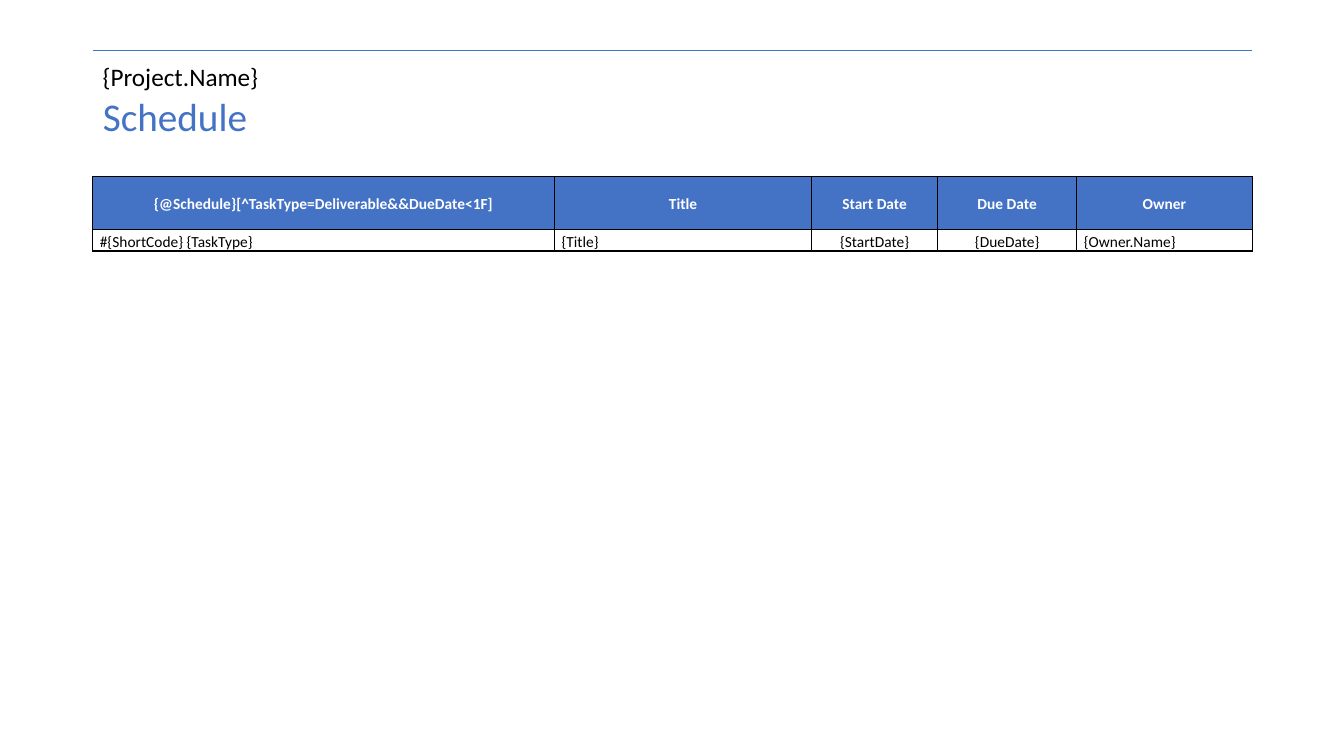
"""Build a project schedule slide with a title and a task table."""
from lxml.etree import SubElement
from pptx import Presentation
from pptx.dml.color import RGBColor
from pptx.enum.shapes import MSO_CONNECTOR as Link
from pptx.enum.text import MSO_ANCHOR as Anchor, MSO_AUTO_SIZE as Fit, PP_ALIGN as Align
from pptx.oxml.ns import qn
from pptx.util import Inches, Pt

BLUE = RGBColor(0x44, 0x72, 0xC4)
BLACK = RGBColor(0, 0, 0)
WHITE = RGBColor(0xFF, 0xFF, 0xFF)
LEFT, WIDTH = 0.92, 11.5
COLS = [4.58, 2.55, 1.25, 1.38, 1.74]
ROWS = [0.53, 0.2]
HEAD = ["{@Schedule}[^TaskType=Deliverable&&DueDate<1F]",
        "Title", "Start Date", "Due Date", "Owner"]
TASK = ["#{ShortCode} {TaskType}", "{Title}", "{StartDate}", "{DueDate}", "{Owner.Name}"]
DATES = (2, 3)


def style(para, size, color, align=Align.LEFT, bold=False, space=0.9):
    """Format one paragraph."""
    para.alignment = align
    para.line_spacing = space
    font = para.font
    font.name, font.size, font.bold = "Calibri", Pt(size), bold
    font.color.rgb = color


def add_rule(slide):
    """Draw the line along the top."""
    rule = slide.shapes.add_connector(
        Link.STRAIGHT, Inches(LEFT), Inches(0.5), Inches(LEFT + WIDTH), Inches(0.5))
    rule.line.color.rgb = BLUE
    rule.line.width = Pt(1)
    SubElement(rule.element.spPr, qn("a:effectLst"))


def set_title(slide, text):
    """Place and format the slide title."""
    title = slide.shapes.title
    title.left, title.top = Inches(LEFT), Inches(0.97)
    title.width, title.height = Inches(WIDTH), Inches(0.42)
    frame = title.text_frame
    frame.text = text
    frame.margin_left = Inches(0.1)
    frame.margin_right = frame.margin_top = frame.margin_bottom = 0
    frame.vertical_anchor = Anchor.TOP
    frame.auto_size = Fit.SHAPE_TO_FIT_TEXT
    style(frame.paragraphs[0], 28, BLUE)


def add_label(slide, text):
    """Add the project name above the title."""
    box = slide.shapes.add_textbox(Inches(LEFT), Inches(0.59), Inches(10.71), Inches(0.3))
    frame = box.text_frame
    frame.word_wrap = True
    frame.text = text
    para = frame.paragraphs[0]
    style(para, 18, BLACK)
    para.space_before = Pt(10)


def add_edges(cell):
    """Give a cell thin black borders."""
    props = cell._tc.get_or_add_tcPr()
    for side in ("lnL", "lnR", "lnT", "lnB"):
        line = SubElement(props, qn(f"a:{side}"), w=str(Pt(1)))
        fill = SubElement(line, qn("a:solidFill"))
        SubElement(fill, qn("a:srgbClr"), val=str(BLACK))


def fill_cell(cell, text, align, head):
    """Write and format one table cell."""
    cell.text = text
    cell.vertical_anchor = Anchor.MIDDLE
    cell.margin_left = cell.margin_right = Inches(0.07)
    cell.margin_top = cell.margin_bottom = 0
    para = cell.text_frame.paragraphs[0]
    style(para, 11, WHITE if head else BLACK, align, head, 1.15)
    para.space_before = para.space_after = Pt(6)
    add_edges(cell)
    if head:
        cell.fill.solid()
        cell.fill.fore_color.rgb = BLUE
    else:
        cell.fill.background()


def add_tasks(slide):
    """Add the schedule table."""
    table = slide.shapes.add_table(
        len(ROWS), len(COLS), Inches(LEFT), Inches(1.75),
        Inches(WIDTH), Inches(sum(ROWS))).table
    table.horz_banding = False
    for col, width in zip(table.columns, COLS):
        col.width = Inches(width)
    for row, height in zip(table.rows, ROWS):
        row.height = Inches(height)
    for r, texts in enumerate((HEAD, TASK)):
        head = r == 0
        for c, text in enumerate(texts):
            align = Align.CENTER if head or c in DATES else Align.LEFT
            fill_cell(table.cell(r, c), text, align, head)


def main():
    """Build and save the slide."""
    deck = Presentation()
    deck.slide_width, deck.slide_height = Inches(13.33), Inches(7.5)
    slide = deck.slides.add_slide(deck.slide_layouts[5])
    add_rule(slide)
    set_title(slide, "Schedule")
    add_label(slide, "{Project.Name}")
    add_tasks(slide)
    deck.save("out.pptx")


if __name__ == "__main__":
    main()
